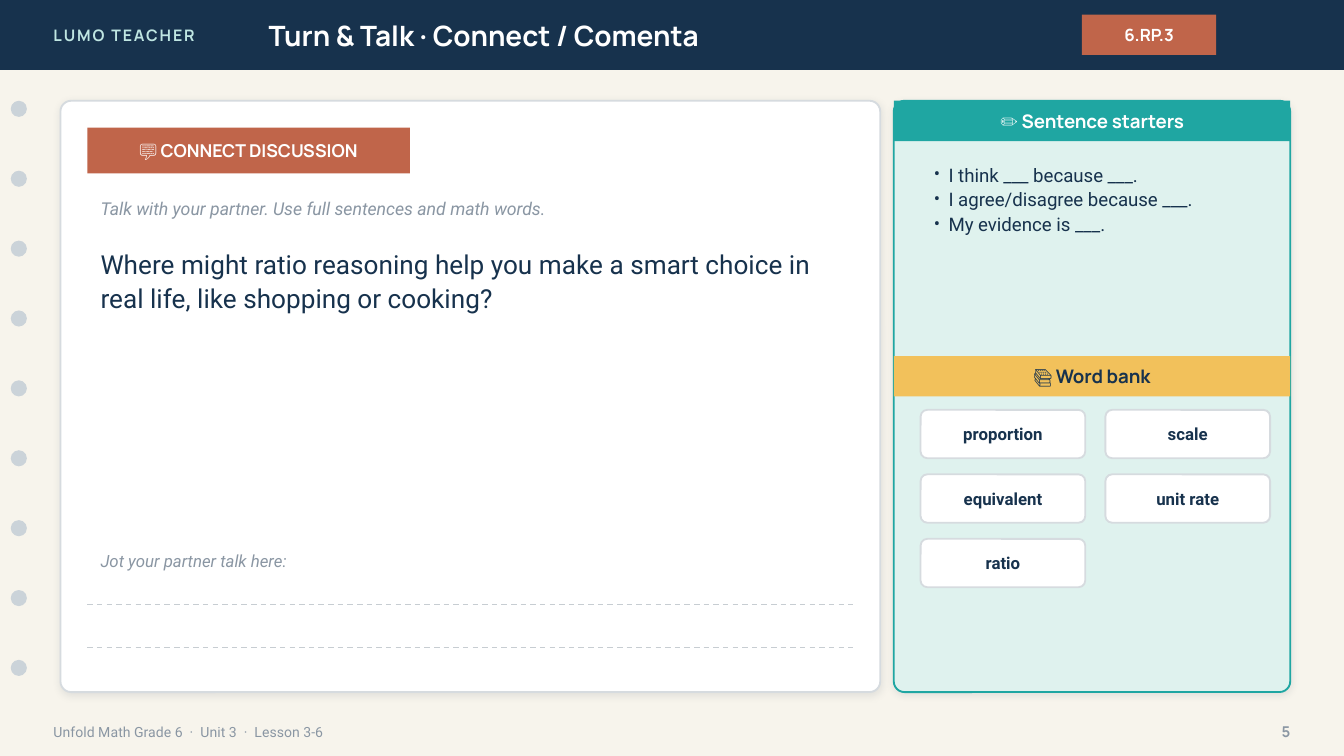
import pptx
import pptx.dml.color
import pptx.enum.dml
import pptx.enum.shapes
import pptx.enum.text
import pptx.oxml
import pptx.oxml.ns
import pptx.util
from lxml import etree

EMU_PER_PX = 4572  # 200 px to the inch
COLORS = {
    "paper": "F7F4EC", "navy": "17324D", "mint": "BFE6E2", "white": "FFFFFF",
    "clay": "C0654A", "hole": "CBD3D9", "gray": "8A96A3", "border": "D6DBDF",
    "rule": "C7CDD2", "teal": "1FA6A2", "pale": "DFF2EE", "gold": "F2C15B",
    "shadow": "1C2E42",
}
SHAPE = pptx.enum.shapes.MSO_SHAPE
ALIGN = pptx.enum.text.PP_ALIGN
ANCHOR = pptx.enum.text.MSO_ANCHOR
STARTERS = ["I think ___ because ___.", "I agree/disagree because ___.", "My evidence is ___."]
WORDS = ["proportion", "scale", "equivalent", "unit rate", "ratio"]


def px(n):
    return pptx.util.Emu(n * EMU_PER_PX)


def rgb(name):
    return pptx.dml.color.RGBColor.from_string(COLORS[name])


def add_run(p, text, size, color, font="Roboto", bold=False, italic=False):
    r = p.add_run()
    r.text = text
    r.font.size = pptx.util.Pt(size)
    r.font.name = font
    r.font.bold = bold
    r.font.italic = italic
    r.font.color.rgb = rgb(color)
    return r


def add_text(s, box, text, size, color, align=ALIGN.LEFT, anchor=ANCHOR.MIDDLE,
             spacing=None, **style):
    """Add a wrapped text box holding one paragraph; return its run."""
    tf = s.shapes.add_textbox(*map(px, box)).text_frame
    tf.word_wrap = True
    tf.vertical_anchor = anchor
    p = tf.paragraphs[0]
    p.alignment = align
    if spacing:
        p.line_spacing = spacing
    return add_run(p, text, size, color, **style)


def add_block(s, kind, box, fill, line=None, corner=None):
    """Add a filled preset shape; corner is the radius in px."""
    sp = s.shapes.add_shape(kind, *map(px, box))
    sp.shadow.inherit = False
    sp.fill.solid()
    sp.fill.fore_color.rgb = rgb(fill)
    if line:
        sp.line.color.rgb = rgb(line)
        sp.line.width = pptx.util.Pt(1)
    else:
        sp.line.fill.background()
    if corner:
        sp.adjustments[0] = corner / min(box[2:])
    return sp


def add_label(s, kind, box, fill, text, size, color, line=None, corner=None, font="Manrope"):
    """Add a block with bold centred text."""
    tf = add_block(s, kind, box, fill, line, corner).text_frame
    tf.word_wrap = True
    tf.vertical_anchor = ANCHOR.MIDDLE
    p = tf.paragraphs[0]
    p.alignment = ALIGN.CENTER
    add_run(p, text, size, color, font=font, bold=True)


def add_card(s, box, fill, line):
    """Add a rounded panel with a soft shadow below it."""
    sp = add_block(s, SHAPE.ROUNDED_RECTANGLE, box, fill, line, corner=16)
    effects = sp.element.spPr.find(pptx.oxml.ns.qn("a:effectLst"))
    effects.append(pptx.oxml.parse_xml(
        f'<a:outerShdw {pptx.oxml.ns.nsdecls("a")} blurRad="50800" dist="12700" '
        f'dir="5400000" rotWithShape="0"><a:srgbClr val="{COLORS["shadow"]}">'
        '<a:alpha val="10000"/></a:srgbClr></a:outerShdw>'))


def add_writing_line(s, x1, x2, y):
    c = s.shapes.add_connector(pptx.enum.shapes.MSO_CONNECTOR.STRAIGHT,
                               px(x1), px(y), px(x2), px(y))
    c.line.color.rgb = rgb("rule")
    c.line.width = pptx.util.Pt(0.75)
    c.line.dash_style = pptx.enum.dml.MSO_LINE.DASH
    etree.SubElement(c.element.spPr, pptx.oxml.ns.qn("a:effectLst"))


def add_bullets(s, box, items, indent=22):
    tf = s.shapes.add_textbox(*map(px, box)).text_frame
    tf.word_wrap = True
    for i, item in enumerate(items):
        p = tf.add_paragraph() if i else tf.paragraphs[0]
        p.line_spacing = 1.1
        pPr = p._p.get_or_add_pPr()
        pPr.set("marL", str(px(indent)))
        pPr.set("indent", str(-px(indent)))
        etree.SubElement(pPr, pptx.oxml.ns.qn("a:buFont"), typeface="Roboto")
        etree.SubElement(pPr, pptx.oxml.ns.qn("a:buChar"), char="•")
        add_run(p, item, 10, "navy")


def add_frame(s):
    """Add the header bar, binder holes and footer."""
    add_block(s, SHAPE.RECTANGLE, (0, 0, 2000, 104), "navy")
    r = add_text(s, (60, 0, 480, 104), "LUMO TEACHER", 8.5, "mint", font="Manrope", bold=True)
    r._r.get_or_add_rPr().set("spc", "100")
    add_text(s, (380, 0, 1120, 104), "Turn & Talk · Connect / Comenta", 15, "white",
             font="Manrope", bold=True)
    add_label(s, SHAPE.RECTANGLE, (1610, 22, 200, 60), "clay", "6.RP.3", 9, "white")
    for i in range(9):
        add_block(s, SHAPE.OVAL, (16, 150 + 104 * i, 24, 24), "hole")
    add_text(s, (60, 1061, 1400, 56), "Unfold Math Grade 6  ·  Unit 3  ·  Lesson 3-6", 7.5, "gray")
    add_text(s, (1840, 1061, 100, 56), "5", 8, "gray", align=ALIGN.RIGHT,
             font="Manrope", bold=True)


def add_discussion(s):
    add_card(s, (90, 150, 1220, 880), "white", "border")
    add_label(s, SHAPE.RECTANGLE, (130, 190, 480, 68), "clay", "💬 CONNECT DISCUSSION",
              9.5, "white")
    add_text(s, (130, 280, 1140, 60), "Talk with your partner. Use full sentences and math words.",
             9.5, "gray", italic=True)
    add_text(s, (130, 356, 1140, 400),
             "Where might ratio reasoning help you make a smart choice in real life, "
             "like shopping or cooking?",
             14, "navy", anchor=ANCHOR.TOP, spacing=1.08)
    add_text(s, (130, 810, 1140, 50), "Jot your partner talk here:", 9, "gray", italic=True)
    for y in (900, 964):
        add_writing_line(s, 130, 1270, y)


def add_support(s):
    """Add the panel with sentence starters and the word bank."""
    add_card(s, (1330, 150, 590, 880), "pale", "teal")
    add_label(s, SHAPE.RECTANGLE, (1330, 150, 590, 60), "teal", "✏️ Sentence starters",
              10, "white")
    add_bullets(s, (1370, 230, 520, 280), STARTERS)
    add_label(s, SHAPE.RECTANGLE, (1330, 530, 590, 60), "gold", "📚 Word bank", 10, "navy")
    for i, word in enumerate(WORDS):
        row, col = divmod(i, 2)
        add_label(s, SHAPE.ROUNDED_RECTANGLE, (1370 + 275 * col, 610 + 96 * row, 245, 72),
                  "white", word, 9, "navy", line="border", corner=10, font="Roboto")


def main():
    prs = pptx.Presentation()
    prs.slide_width, prs.slide_height = px(2000), px(1125)
    s = prs.slides.add_slide(prs.slide_layouts[6])
    s.background.fill.solid()
    s.background.fill.fore_color.rgb = rgb("paper")
    add_frame(s)
    add_discussion(s)
    add_support(s)
    prs.save("out.pptx")


if __name__ == "__main__":
    main()
